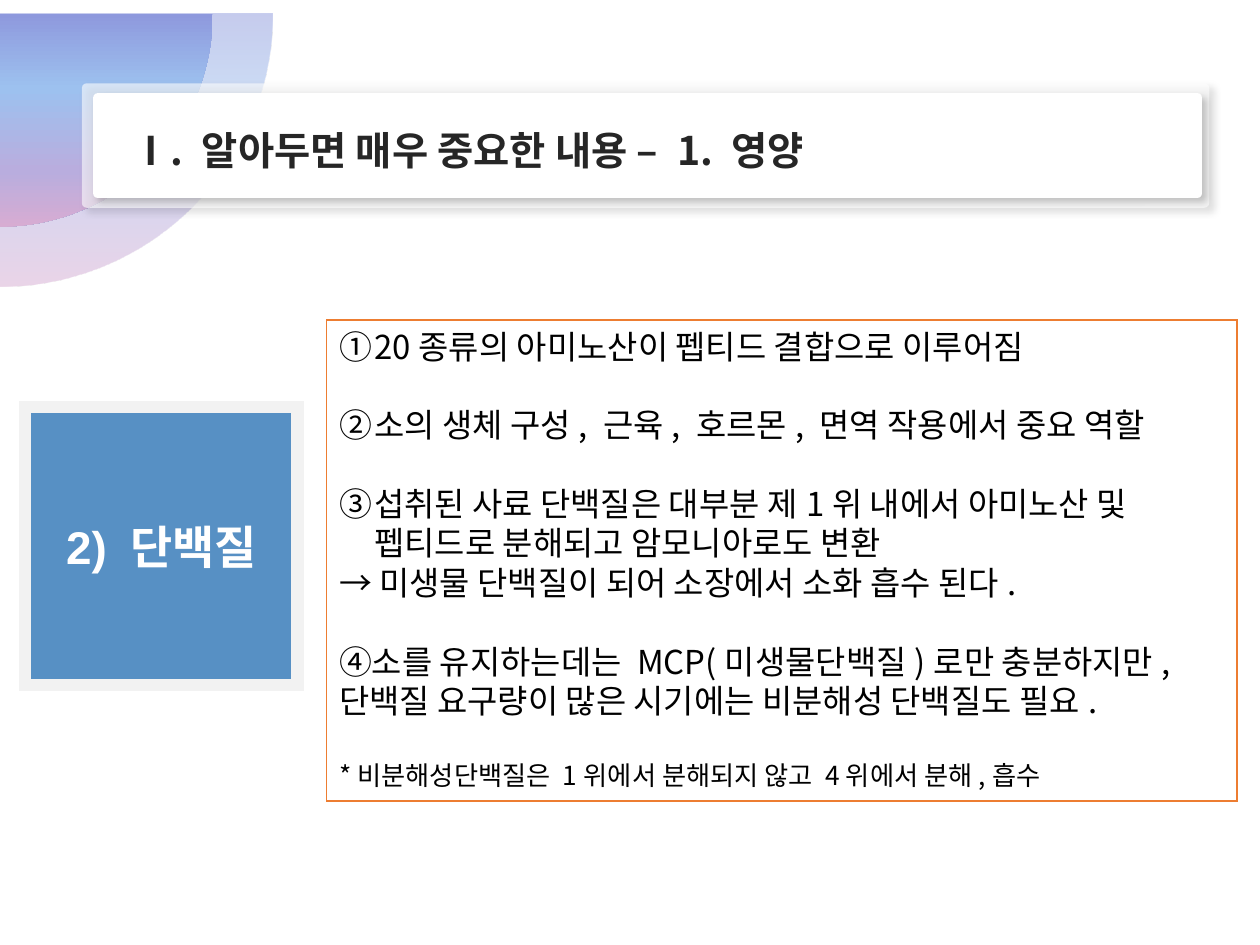
from math import cos, pi, sin

from lxml import etree
from pptx import Presentation
from pptx.dml.color import RGBColor
from pptx.enum.shapes import MSO_SHAPE
from pptx.enum.text import MSO_ANCHOR, MSO_AUTO_SIZE, PP_ALIGN
from pptx.oxml.ns import qn
from pptx.util import Cm, Pt

RECTANGLE, ROUNDED = MSO_SHAPE.RECTANGLE, MSO_SHAPE.ROUNDED_RECTANGLE
MIDDLE, TOP = MSO_ANCHOR.MIDDLE, MSO_ANCHOR.TOP
LEFT, CENTER = PP_ALIGN.LEFT, PP_ALIGN.CENTER
NO_AUTOFIT = MSO_AUTO_SIZE.NONE

THEME = {
    "font": "Noto Sans CJK KR", "label_font": "Arial",
    "title": 22.5, "label": 26.2, "body": 18.8, "note": 15,
    "line": 22.5, "note_line": 18,
    "ink": "000000", "title_ink": "262626", "paper": "FFFFFF",
    "accent": "2E75B6", "frame": "F2F2F2", "border": "ED7D31",
    "gradient": [(0, "8E99DD"), (35, "9DC1EF"), (74, "B9ADDE"), (100, "D7ACD2")],
}

TITLE = "Ⅰ. 알아두면 매우 중요한 내용 – 1. 영양"
LABEL = "2) 단백질"
BODY = [
    ("numbered", "20종류의 아미노산이 펩티드 결합으로 이루어짐"),
    ("numbered", "소의 생체 구성, 근육, 호르몬, 면역 작용에서 중요 역할"),
    ("numbered", "섭취된 사료 단백질은 대부분 제1위 내에서 아미노산 및 펩티드로 분해되고 암모니아로도 변환"),
    ("follow", "→ 미생물 단백질이 되어 소장에서 소화 흡수 된다."),
    ("plain", "④소를 유지하는데는 MCP(미생물단백질)로만 충분하지만,"),
    ("follow", "단백질 요구량이 많은 시기에는 비분해성 단백질도 필요."),
    ("note", "*비분해성단백질은 1위에서 분해되지 않고 4위에서 분해,흡수"),
]
DISCS = [(5.49, 50), (4.29, 100)]
DISC_TOP = 0.28
BANNERS = [((1.65, 1.68, 22.73, 2.51), 60), ((1.88, 1.88, 22.35, 2.11), 100)]
TITLE_AREA = (2.39, 2.41, 17.35, 1.22)
LABEL_AREA = (0.51, 8.2, 5.49, 5.61)
BODY_AREA = (6.58, 6.45, 18.36, 9.7)


def add_node(parent, tag, **attributes):
    return etree.SubElement(parent, qn(tag), {key: str(value) for key, value in attributes.items()})


def add_color(parent, color, opacity):
    node = add_node(parent, "a:srgbClr", val=color)
    add_node(node, "a:alpha", val=opacity * 1000)


def place(shape, area):
    shape.left, shape.top, shape.width, shape.height = map(Cm, area)


def add_disc(page, radius, opacity, steps=60):
    center = Cm(DISC_TOP)
    arc = [(Cm(radius * cos(step * pi / 2 / steps)),
            center + Cm(radius * sin(step * pi / 2 / steps))) for step in range(steps + 1)]
    builder = page.shapes.build_freeform(0, center)
    builder.add_line_segments(arc, close=True)
    disc = builder.convert_to_shape()
    disc.shadow.inherit = False
    disc.line.fill.background()
    gradient = etree.Element(qn("a:gradFill"), rotWithShape="1")
    stops = add_node(gradient, "a:gsLst")
    for position, color in THEME["gradient"]:
        add_color(add_node(stops, "a:gs", pos=position * 1000), color, opacity)
    add_node(gradient, "a:lin", ang=5400000, scaled=0)
    disc.element.spPr.find(qn("a:custGeom")).addnext(gradient)


def add_panel(page, kind, area, color, opacity):
    panel = page.shapes.add_shape(kind, *map(Cm, area))
    panel.shadow.inherit = False
    panel.fill.solid()
    panel.fill.fore_color.rgb = RGBColor.from_string(color)
    swatch = panel.element.spPr.find(qn("a:solidFill")).find(qn("a:srgbClr"))
    add_node(swatch, "a:alpha", val=opacity * 1000)
    panel.line.fill.background()
    return panel


def add_banner(page, area, opacity):
    banner = add_panel(page, ROUNDED, area, THEME["paper"], opacity)
    banner.adjustments[0] = 0.04
    effects = banner.element.spPr.find(qn("a:effectLst"))
    shadow = add_node(effects, "a:outerShdw", blurRad=Pt(4), dist=Pt(3),
                      dir=2700000, algn="tl", rotWithShape=0)
    add_color(shadow, THEME["ink"], 20)


def set_line(shape, color, width):
    shape.line.color.rgb = RGBColor.from_string(color)
    shape.line.width = Pt(width)
    add_node(shape.element.spPr.find(qn("a:ln")), "a:miter", lim=800000)


def format_para(para, size, color, bold=False, font=THEME["font"], align=LEFT):
    para.alignment = align
    for span in para.runs:
        span.font.size = Pt(size)
        span.font.bold = bold
        span.font.name = font
        span.font.color.rgb = RGBColor.from_string(color)
        add_node(span.font._element, "a:ea", typeface=THEME["font"])


def prepare_frame(shape, anchor):
    frame = shape.text_frame
    frame.word_wrap = True
    frame.auto_size = NO_AUTOFIT
    frame.vertical_anchor = anchor
    return frame


def bring_forward(shape):
    shape.element.getparent().append(shape.element)


def fill_title(page):
    title = page.shapes.title
    place(title, TITLE_AREA)
    bring_forward(title)
    frame = prepare_frame(title, MIDDLE)
    frame.text = TITLE
    format_para(frame.paragraphs[0], THEME["title"], THEME["title_ink"], bold=True)


def add_label(page):
    label = add_panel(page, RECTANGLE, LABEL_AREA, THEME["accent"], 80)
    set_line(label, THEME["frame"], 7)
    frame = prepare_frame(label, MIDDLE)
    frame.text = LABEL
    format_para(frame.paragraphs[0], THEME["label"], THEME["paper"], True,
                THEME["label_font"], CENTER)


def fill_body(page):
    body = page.placeholders[1]
    place(body, BODY_AREA)
    bring_forward(body)
    set_line(body, THEME["border"], 0.75)
    frame = prepare_frame(body, TOP)
    frame.text = "\n".join(text for role, text in BODY)
    for index, (para, (role, text)) in enumerate(zip(frame.paragraphs, BODY)):
        note = role == "note"
        format_para(para, THEME["note" if note else "body"], THEME["ink"])
        para.line_spacing = Pt(THEME["note_line" if note else "line"])
        para.space_before = Pt(0 if index == 0 or role == "follow" else THEME["line"])
        para.space_after = Pt(0)
        settings = para._p.get_or_add_pPr()
        indent = Cm(0.71) if role == "numbered" else 0
        settings.set("marL", str(indent))
        settings.set("indent", str(-indent))
        if role == "numbered":
            add_node(settings, "a:buFont", typeface=THEME["font"])
            add_node(settings, "a:buAutoNum", type="circleNumDbPlain")
        else:
            add_node(settings, "a:buNone")


def main():
    deck = Presentation()
    deck.slide_width, deck.slide_height = Cm(25.4), Cm(19.05)
    page = deck.slides.add_slide(deck.slide_layouts[1])
    for radius, opacity in DISCS:
        add_disc(page, radius, opacity)
    for area, opacity in BANNERS:
        add_banner(page, area, opacity)
    fill_title(page)
    add_label(page)
    fill_body(page)
    deck.save("out.pptx")


if __name__ == "__main__":
    main()
